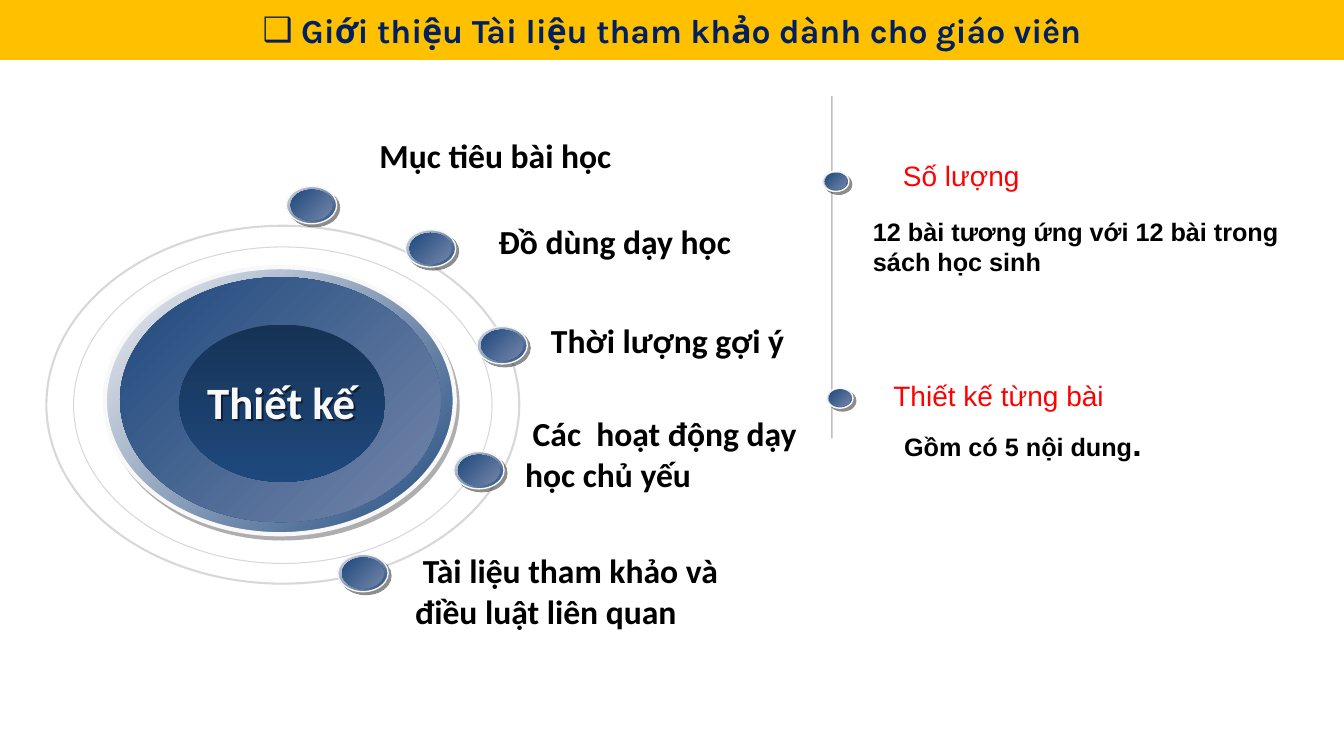
from dataclasses import dataclass
from lxml.etree import SubElement
from pptx import Presentation
from pptx.dml.color import RGBColor
from pptx.enum.shapes import MSO_CONNECTOR, MSO_SHAPE
from pptx.enum.text import MSO_ANCHOR, PP_ALIGN
from pptx.oxml.ns import qn
from pptx.util import Inches, Pt


@dataclass(frozen=True)
class Theme:
    navy: str = "1F497D"
    deep: str = "163356"
    steel: str = "7486AA"
    mist: str = "DDDEE4"
    pale: str = "F3F3F5"
    rim: str = "F8F8F8"
    ring: str = "B2B2B2"
    rule: str = "808080"
    shade: str = "5F5F5F"
    dark: str = "1C1C1C"
    black: str = "000000"
    red: str = "FF0000"
    gold: str = "FFC000"
    ink: str = "002060"
    body: int = 18
    head: int = 20
    item: int = 24
    hub: int = 32
    sans: str = "Arial"
    soft: str = "Calibri"
    bold: str = "Karla"
    mark: str = "DejaVu Sans"


T = Theme()


def rgb(code):
    return RGBColor.from_string(code)


def fade(color):
    SubElement(color, qn("a:alpha"), val="50000")


def cast(shape, code, dist, angle):
    shape.shadow.inherit = False
    effects = shape._element.spPr.find(qn("a:effectLst"))
    shadow = SubElement(effects, qn("a:outerShdw"), blurRad="0",
                        dist=str(Pt(dist)), dir=str(angle * 60000),
                        algn="ctr", rotWithShape="0")
    fade(SubElement(shadow, qn("a:srgbClr"), val=code))


def stroke(shape, code, width, clear=False):
    shape.line.color.rgb = rgb(code)
    shape.line.width = Pt(width)
    if clear:
        fade(shape._element.spPr.find(".//" + qn("a:srgbClr")))


def oval(shapes, left, top, width, height):
    shape = shapes.add_shape(MSO_SHAPE.OVAL, Inches(left), Inches(top),
                             Inches(width), Inches(height))
    shape.fill.background()
    shape.line.fill.background()
    shape.shadow.inherit = False
    return shape


def ring(slide, box, width):
    stroke(oval(slide.shapes, *box), T.ring, width, True)


def disc(shapes, box, start, end, angle=45):
    shape = oval(shapes, *box)
    shape.fill.gradient()
    shape.fill.gradient_angle = 360 - angle
    for stop, code, place in zip(shape.fill.gradient_stops, (start, end), (0, 1)):
        stop.color.rgb = rgb(code)
        stop.position = place
    return shape


def rimmed(shapes, box, start, width, shade, dist, angle):
    shape = disc(shapes, box, start, T.navy)
    stroke(shape, T.rim, width)
    cast(shape, shade, dist, angle)


def bead(slide, left, top, width, height):
    shapes = slide.shapes.add_group_shape().shapes
    rimmed(shapes, (left, top, width, height), T.mist, 1, T.dark, 2.8, 45)
    scale = 0.83
    edge = (1 - scale) / 2
    inner = (left + width * edge, top + height * edge, width * scale, height * scale)
    disc(shapes, inner, T.navy, T.steel)


def hub(slide):
    shapes = slide.shapes.add_group_shape().shapes
    rimmed(shapes, (1.04, 2.65, 3.47, 2.65), T.pale, 3, T.shade, 3.6, 56)
    disc(shapes, (1.19, 2.75, 3.18, 2.43), T.navy, T.steel)
    disc(shapes, (1.78, 3.22, 2.04, 1.56), T.deep, T.navy, 90)


def style(run, size, face, code, bold):
    font = run.font
    font.size, font.name, font.bold = Pt(size), face, bold
    font.color.rgb = rgb(code)


def label(slide, box, text, size, face, code=T.black, bold=True):
    shape = slide.shapes.add_textbox(*map(Inches, box))
    frame = shape.text_frame
    frame.text = text
    frame.word_wrap = True
    style(frame.paragraphs[0].runs[0], size, face, code, bold)
    return shape


def rule(slide):
    line = slide.shapes.add_connector(MSO_CONNECTOR.STRAIGHT, Inches(8.25),
                                      Inches(0.95), Inches(8.25), Inches(4.35))
    stroke(line, T.rule, 1, True)
    SubElement(line._element.spPr, qn("a:effectLst"))


def banner(slide, text):
    shape = slide.shapes.add_shape(MSO_SHAPE.FLOWCHART_PROCESS, 0, 0,
                                   Inches(13.33), Inches(0.6))
    shape.shadow.inherit = False
    shape.fill.solid()
    shape.fill.fore_color.rgb = rgb(T.gold)
    shape.line.fill.background()
    frame = shape.text_frame
    frame.text = text
    frame.vertical_anchor = MSO_ANCHOR.MIDDLE
    para = frame.paragraphs[0]
    props = para._p.get_or_add_pPr()
    props.set("marL", str(Inches(0.38)))
    props.set("indent", str(-Inches(0.38)))
    SubElement(props, qn("a:buFont"), typeface=T.mark)
    SubElement(props, qn("a:buChar"), char="❑")
    para.alignment = PP_ALIGN.CENTER
    style(para.runs[0], T.item, T.bold, T.ink, True)


def main():
    deck = Presentation()
    deck.slide_width, deck.slide_height = Inches(13.33), Inches(7.5)
    slide = deck.slides.add_slide(deck.slide_layouts[6])

    rule(slide)
    ring(slide, (0.73, 2.45, 4.15, 3.14), 0.75)
    hub(slide)
    ring(slide, (0.46, 2.24, 4.69, 3.55), 1.5)
    core = label(slide, (1.34, 3.67, 2.9, 0.64), "Thiết kế", T.hub, T.soft, T.rim)
    core.text_frame.paragraphs[0].alignment = PP_ALIGN.CENTER
    cast(core, T.black, 2, 45)

    items = [
        ((2.84, 1.85), (3.59, 1.29, 3.04, 0.5), "Mục tiêu bài học"),
        ((4.02, 2.28), (4.77, 2.14, 2.66, 0.5), "Đồ dùng dạy học"),
        ((4.73, 3.24), (5.29, 3.12, 2.73, 0.5), "Thời lượng gợi ý"),
        ((4.5, 4.48), (5.11, 4.05, 3.04, 0.91), "Các  hoạt động dạy học chủ yếu"),
        ((3.35, 5.5), (4.02, 5.41, 3.57, 0.91),
         "Tài liệu tham khảo và điều luật liên quan"),
    ]
    for spot, box, text in items:
        bead(slide, *spot, 0.5, 0.37)
        label(slide, box, " " + text, T.item, T.soft)

    heads = [
        ((8.16, 1.7), (8.78, 1.52, 2.6, 0.44), "Số lượng"),
        ((8.2, 3.85), (8.69, 3.71, 2.6, 0.44), "Thiết kế từng bài"),
    ]
    for spot, box, text in heads:
        bead(slide, *spot, 0.26, 0.2)
        label(slide, box, " " + text, T.head, T.sans, T.red, False)

    count = label(slide, (8.56, 2.09, 4.49, 0.71),
                  "12 bài tương ứng với 12 bài trong sách học sinh", T.body, T.sans)
    count.text_frame.vertical_anchor = MSO_ANCHOR.MIDDLE
    parts = label(slide, (8.8, 4.15, 4.33, 0.5), " Gồm có 5 nội dung", T.body, T.sans)
    dot = parts.text_frame.paragraphs[0].add_run()
    dot.text = "."
    style(dot, T.item, T.sans, T.black, True)

    banner(slide, "Giới thiệu Tài liệu tham khảo dành cho giáo viên")
    deck.save("out.pptx")


if __name__ == "__main__":
    main()
